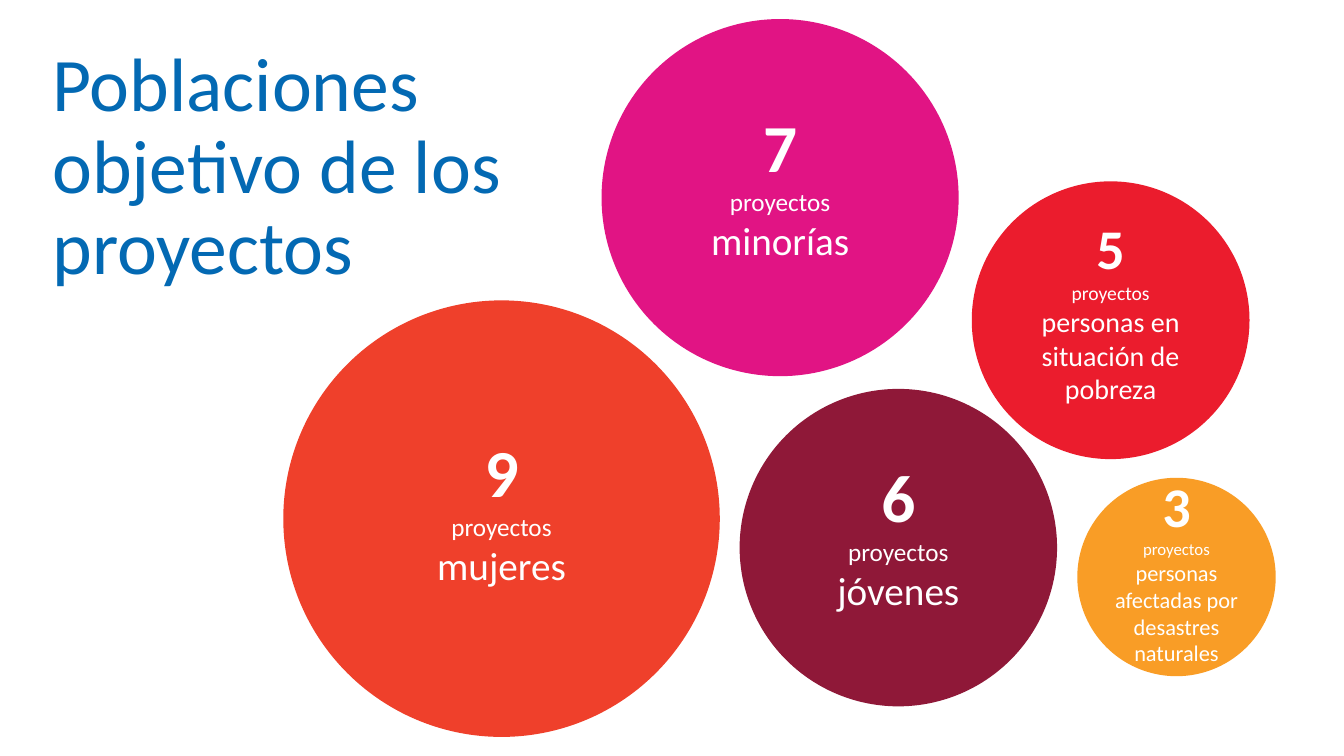
"""Build a slide of bubbles that count projects by target population."""
from pptx import Presentation
from pptx.dml.color import RGBColor as Rgb
from pptx.enum.shapes import MSO_SHAPE as Shape
from pptx.enum.text import MSO_ANCHOR as Anchor, PP_ALIGN as Align
from pptx.util import Cm, Pt

HUES = {
    "title": "0369B3",
    "white": "FFFFFF",
    "women": "EF402B",
    "minor": "E11484",
    "youth": "8F1838",
    "poor": "EB1C2D",
    "storm": "F99D26",
}

# hue, circle (left, top, size), text (top, width, height), lines, sizes
GROUPS = [
    ("women", (7.14, 7.57, 11), (10.72, 4.62, 4.37), ("9", "mujeres"), (48, 18, 28)),
    ("minor", (15.16, 0.48, 9), (2.54, 4.67, 4.27), ("7", "minorías"), (48, 18, 28)),
    ("youth", (18.64, 9.8, 8), (11.35, 4.32, 4.27), ("6", "jóvenes"), (48, 18, 28)),
    ("poor", (24.49, 4.57, 7), (5.26, 4.32, 5.13),
     ("5", "personas en situación de pobreza"), (40, 14, 20)),
    ("storm", (27.15, 12.04, 5), (11.76, 4.32, 5.21),
     ("3", "personas afectadas por desastres naturales"), (40, 12, 16)),
]


def add_text(shapes, box, lines, sizes, hue):
    """Add a wrapped text box with one paragraph per line and return its frame."""
    frame = shapes.add_textbox(*(Cm(n) for n in box)).text_frame
    frame.word_wrap = True
    frame.vertical_anchor = Anchor.TOP
    frame.text = "\n".join(lines)
    for para, size in zip(frame.paragraphs, sizes):
        font = para.runs[0].font
        font.name = "Calibri"
        font.size = Pt(size)
        font.color.rgb = Rgb.from_string(HUES[hue])
    return frame


def add_title(slide, box):
    """Place the slide title in its box."""
    lines = ["Poblaciones objetivo de los proyectos"]
    frame = add_text(slide.shapes, box, lines, [54], "title")
    frame.paragraphs[0].line_spacing = 0.9


def add_bubble(slide, hue, circle, label, lines, sizes):
    """Group a filled circle with its label centred across it."""
    shapes = slide.shapes.add_group_shape().shapes
    left, top, size = circle
    disc = shapes.add_shape(Shape.OVAL, Cm(left), Cm(top), Cm(size), Cm(size))
    disc.shadow.inherit = False
    disc.fill.solid()
    disc.fill.fore_color.rgb = Rgb.from_string(HUES[hue])
    disc.line.fill.background()
    start, width, height = label
    box = (left + (size - width) / 2, start, width, height)
    count, name = lines
    frame = add_text(shapes, box, [count, "proyectos", name], sizes, "white")
    for para in frame.paragraphs:
        para.alignment = Align.CENTER
    frame.paragraphs[0].runs[0].font.bold = True


def main():
    """Build the slide and save it."""
    deck = Presentation()
    deck.slide_width, deck.slide_height = Cm(33.87), Cm(19.05)
    slide = deck.slides.add_slide(deck.slide_layouts[6])
    add_title(slide, (1.07, 1.04, 12.17, 3))
    for group in GROUPS:
        add_bubble(slide, *group)
    deck.save("out.pptx")


if __name__ == "__main__":
    main()
